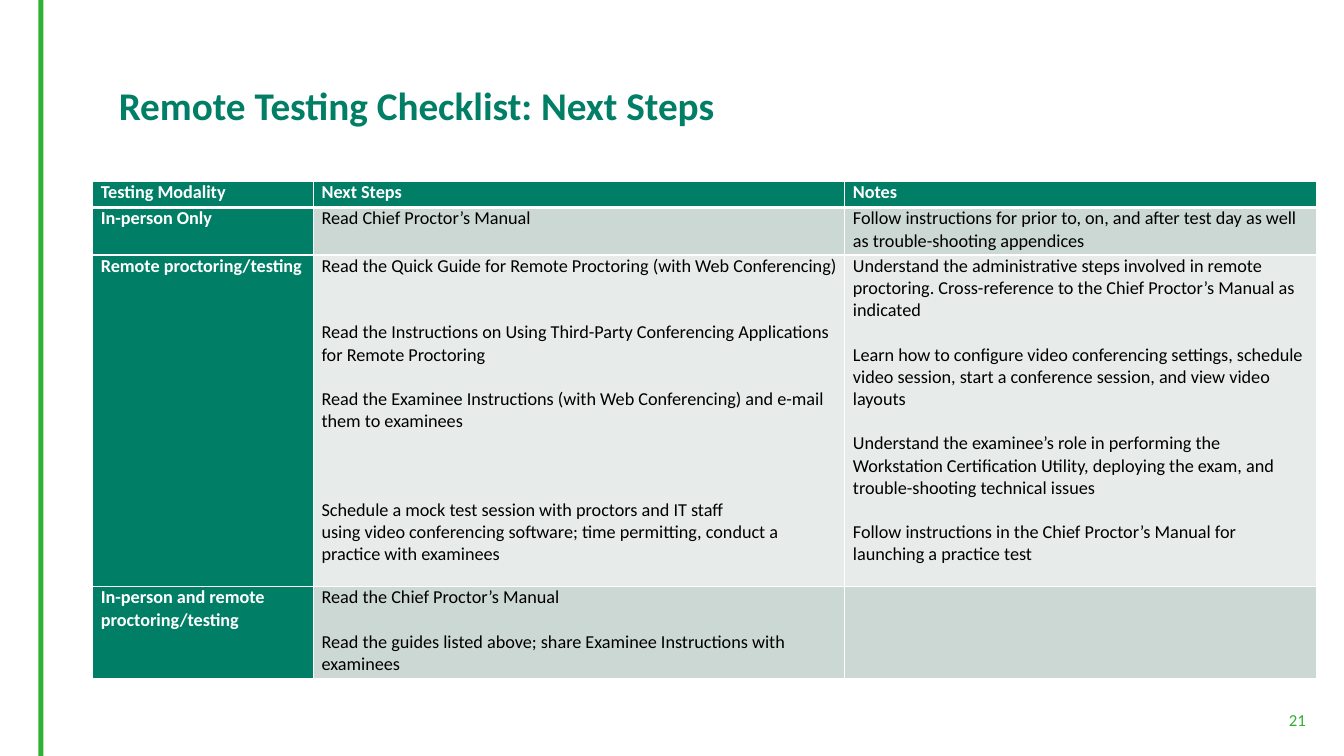
from lxml import etree
from pptx import Presentation
from pptx import util as u
from pptx.dml.color import RGBColor
from pptx.enum import shapes, text
from pptx.oxml.ns import qn

GREEN, LIME, WHITE, BLACK = "007E66", "2EB135", "FFFFFF", "000000"
BANDS = ["CCD8D3", "E7ECEA"]
LINE = 15.87  # points in one line of table text


def paint(target, color):
    """Give a fill or a font one solid colour."""
    if hasattr(target, "solid"):
        target.solid()
        target.fore_color.rgb = RGBColor.from_string(color)
    else:
        target.color.rgb = RGBColor.from_string(color)


def write(p, words, color, **style):
    r = p.add_run()
    r.text = words
    for name, value in {"name": "Calibri", **style}.items():
        setattr(r.font, name, value)
    paint(r.font, color)


prs = Presentation()
prs.slide_width, prs.slide_height = u.Inches(13.33), u.Inches(7.5)
s = prs.slides.add_slide(prs.slide_layouts[6])

bar = s.shapes.add_shape(shapes.MSO_SHAPE.RECTANGLE, u.Inches(0.38), 0,
                         u.Inches(0.05), prs.slide_height)
bar.shadow.inherit = False
paint(bar.fill, LIME)
bar.line.fill.background()

labels = [
    ((1.08, 0.57, 11.5, 1), "Remote Testing Checklist: Next Steps", GREEN,
     {"size": u.Pt(28), "bold": True}, text.MSO_ANCHOR.MIDDLE,
     {"line_spacing": 0.9}),
    ((9.57, 6.99, 3.48, 0.3), "21", LIME, {"size": u.Pt(12)},
     text.MSO_ANCHOR.BOTTOM, {"alignment": text.PP_ALIGN.RIGHT}),
]
for box, words, color, style, anchor, layout in labels:
    tf = s.shapes.add_textbox(*map(u.Inches, box)).text_frame
    tf.word_wrap = True
    tf.vertical_anchor = anchor
    p = tf.paragraphs[0]
    for name, value in layout.items():
        setattr(p, name, value)
    write(p, words, color, **style)

# Each cell lists its paragraphs as (blank lines above, words).
rows = [
    [[(0, "Testing Modality")], [(0, "Next Steps")], [(0, "Notes")]],
    [[(0, "In-person Only")],
     [(0, "Read Chief Proctor’s Manual")],
     [(0, "Follow instructions for prior to, on, and after test day as well "
          "as trouble-shooting appendices")]],
    [[(0, "Remote proctoring/testing")],
     [(0, "Read the Quick Guide for Remote Proctoring (with Web Conferencing)"),
      (2, "Read the Instructions on Using Third-Party Conferencing "
          "Applications for Remote Proctoring"),
      (1, "Read the Examinee Instructions (with Web Conferencing) and e-mail "
          "them to examinees"),
      (3, "Schedule a mock test session with proctors and IT staff"),
      (0, "using video conferencing software; time permitting, conduct a "
          "practice with examinees")],
     [(0, "Understand the administrative steps involved in remote proctoring. "
          "Cross-reference to the Chief Proctor’s Manual as indicated"),
      (1, "Learn how to configure video conferencing settings, schedule video "
          "session, start a conference session, and view video layouts"),
      (1, "Understand the examinee’s role in performing the Workstation "
          "Certification Utility, deploying the exam, and trouble-shooting "
          "technical issues"),
      (1, "Follow instructions in the Chief Proctor’s Manual for launching a "
          "practice test")]],
    [[(0, "In-person and remote proctoring/testing")],
     [(0, "Read the Chief Proctor’s Manual"),
      (1, "Read the guides listed above; share Examinee Instructions with "
          "examinees")],
     []],
]
widths = [2.19, 5.27, 4.68]
heights = [0.26, 0.47, 3.29, 0.91]
margins = {"margin_left": 0.08, "margin_right": 0.08,
           "margin_top": 0, "margin_bottom": 0}

table = s.shapes.add_table(len(rows), len(widths), u.Inches(0.92), u.Inches(1.8),
                           u.Inches(sum(widths)), u.Inches(sum(heights))).table
for column, width in zip(table.columns, widths):
    column.width = u.Inches(width)
for i, (row, height) in enumerate(zip(rows, heights)):
    table.rows[i].height = u.Inches(height)
    for j, paragraphs in enumerate(row):
        cell = table.cell(i, j)
        for name, value in margins.items():
            setattr(cell, name, u.Inches(value))

        tcPr = cell._tc.get_or_add_tcPr()
        for side in "LRTB":
            under_header = (i, side) in [(0, "B"), (1, "T")]
            ln = etree.SubElement(tcPr, qn(f"a:ln{side}"),
                                  w=str(u.Pt(3 if under_header else 1)))
            fill = etree.SubElement(ln, qn("a:solidFill"))
            etree.SubElement(fill, qn("a:srgbClr"), val=WHITE)

        heading = i == 0 or j == 0
        paint(cell.fill, GREEN if heading else BANDS[(i - 1) % 2])
        tf = cell.text_frame
        for k, (gap, words) in enumerate(paragraphs):
            p = tf.add_paragraph() if k else tf.paragraphs[0]
            p.space_before = u.Pt(gap * LINE)
            write(p, words, WHITE if heading else BLACK,
                  size=u.Pt(13), bold=heading)

prs.save("out.pptx")
